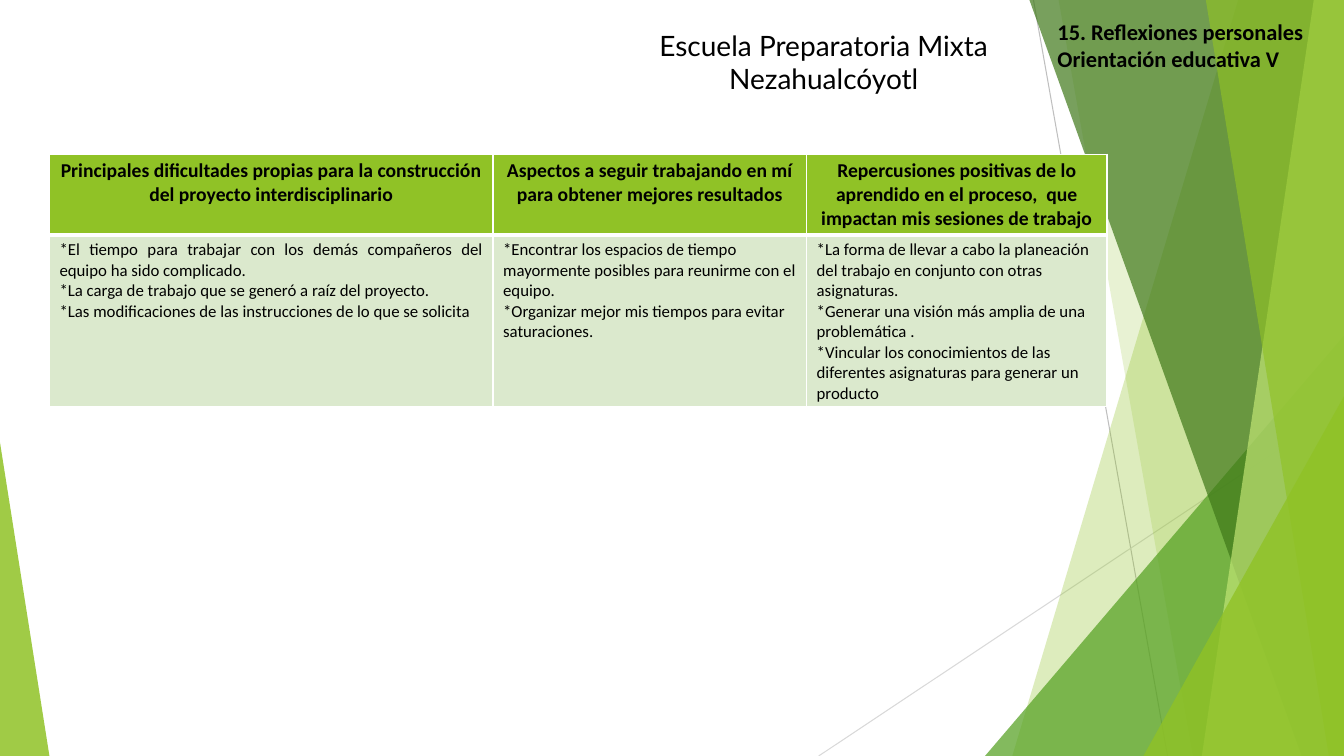
from lxml import etree
from pptx import Presentation
from pptx.dml.color import RGBColor
from pptx.enum.shapes import MSO_CONNECTOR, MSO_SHAPE
from pptx.enum.text import MSO_AUTO_SIZE, PP_ALIGN
from pptx.oxml.ns import qn
from pptx.util import Inches, Pt

LEFT, MID, JUST = PP_ALIGN.LEFT, PP_ALIGN.CENTER, PP_ALIGN.JUSTIFY
LINE, TRI = MSO_CONNECTOR.STRAIGHT, MSO_SHAPE.RIGHT_TRIANGLE
TRI = MSO_SHAPE.ISOSCELES_TRIANGLE
GROW = MSO_AUTO_SIZE.SHAPE_TO_FIT_TEXT
WIDE, HIGH = 13.33, 7.5
LIME = "90C226"


def paint(fill, tone, alpha=100):
    fill.solid()
    fill.fore_color.rgb = RGBColor.from_string(tone)
    if alpha < 100:
        node = fill._xPr.find(qn("a:solidFill"))[0]
        etree.SubElement(node, qn("a:alpha"), val=str(alpha * 1000))


def write(frame, lines, align, size, bold, face="Calibri"):
    style = {"size": Pt(size), "bold": bold, "name": face}
    for n, line in enumerate(lines):
        para = frame.paragraphs[0] if n == 0 else frame.add_paragraph()
        para.alignment = align
        run = para.add_run()
        run.text = line
        for key, value in style.items():
            setattr(run.font, key, value)
        run.font.color.rgb = RGBColor.from_string("000000")


deck = Presentation()
deck.slide_width, deck.slide_height = Inches(WIDE), Inches(HIGH)
slide = deck.slides.add_slide(deck.slide_layouts[6])
shapes = slide.shapes

for x1, y1, x2, y2, tone in [
    (10.25, 0, 11.58, HIGH, "BFBFBF"),
    (WIDE, 4.03, 8.12, HIGH, "D9D9D9"),
]:
    rule = shapes.add_connector(LINE, Inches(x1), Inches(y1), Inches(x2), Inches(y2))
    rule.line.width = Pt(0.75)
    paint(rule.line.fill, tone)
    etree.SubElement(rule._element.spPr, qn("a:effectLst"))

facets = [
    ("band", 12.28, 10.04, LIME, 30),
    ("band", 10.5, 11.83, LIME, 20),
    ("peak", 9.77, 3.33, 3.56, 1, "54A021", 72),
    ("band", 10.21, 12.91, "3F7819", 70),
    ("band", 13.03, 11.92, "C0E474", 70),
    ("band", 11.96, 13.18, LIME, 65),
    ("peak", 11.34, 3.93, 1.99, 1, LIME, 80),
    ("peak", 0, 4.39, 0.49, 0, LIME, 85),
]
for kind, *spots, tone, alpha in facets:
    if kind == "band":
        top, foot = spots
        pen = shapes.build_freeform(Inches(top), 0)
        ends = [(WIDE, 0), (WIDE, HIGH), (foot, HIGH)]
        pen.add_line_segments([(Inches(x), Inches(y)) for x, y in ends])
        facet = pen.convert_to_shape()
    else:
        x, y, width, tip = spots
        facet = shapes.add_shape(
            TRI, Inches(x), Inches(y), Inches(width), Inches(HIGH - y)
        )
        facet.adjustments[0] = tip
    facet.shadow.inherit = False
    facet.line.fill.background()
    paint(facet.fill, tone, alpha)

for area, lines, align, size, bold, face in [
    ((5.51, 0.23, 5.32, 0.44), ["Escuela Preparatoria Mixta Nezahualcóyotl"],
     MID, 20, False, "Lato"),
    ((10.39, 0.13, 2.76, 0.64),
     ["15. Reflexiones personales", "Orientación educativa V"],
     LEFT, 16, True, "Calibri"),
]:
    frame = shapes.add_textbox(*map(Inches, area)).text_frame
    frame.word_wrap = True
    frame.auto_size = GROW
    write(frame, lines, align, size, bold, face)

heads = [
    "Principales dificultades propias para la construcción del proyecto interdisciplinario",
    "Aspectos a seguir trabajando en mí para obtener mejores resultados",
    "Repercusiones positivas de lo aprendido en el proceso,  que impactan mis sesiones de trabajo",
]
notes = [
    ["*El tiempo para trabajar con los demás compañeros del equipo ha sido complicado.",
     "*La carga de trabajo que se generó a raíz del proyecto.",
     "*Las modificaciones de las instrucciones de lo que se solicita"],
    ["*Encontrar los espacios de tiempo mayormente posibles para reunirme con el equipo.",
     "*Organizar mejor mis tiempos para evitar saturaciones."],
    ["*La forma de llevar a cabo la planeación del trabajo en conjunto con otras asignaturas.",
     "*Generar una visión más amplia de una problemática .",
     "*Vincular los conocimientos de las diferentes asignaturas para generar un producto"],
]
table = shapes.add_table(
    2, 3, Inches(0.49), Inches(1.53), Inches(10.49), Inches(2.5)
).table
table.first_row = table.horz_banding = False
for row, height in zip(table.rows, (0.8, 1.7)):
    row.height = Inches(height)
for col, width in zip(table.columns, (4.4, 3.11, 2.98)):
    col.width = Inches(width)

for r, (cells, tone, size, thick) in enumerate([
    ([[head] for head in heads], LIME, 14, "lnB"),
    (notes, "DBE9CD", 12, "lnT"),
]):
    for c, lines in enumerate(cells):
        cell = table.cell(r, c)
        align = MID if r == 0 else JUST if c == 0 else LEFT
        write(cell.text_frame, lines, align, size, r == 0)
        props = cell._tc.get_or_add_tcPr()
        for side in ("lnL", "lnR", "lnT", "lnB"):
            weight = Pt(3 if side == thick else 1)
            edge = etree.SubElement(props, qn("a:" + side), w=str(weight))
            solid = etree.SubElement(edge, qn("a:solidFill"))
            etree.SubElement(solid, qn("a:srgbClr"), val="FFFFFF")
        paint(cell.fill, tone)

deck.save("out.pptx")
